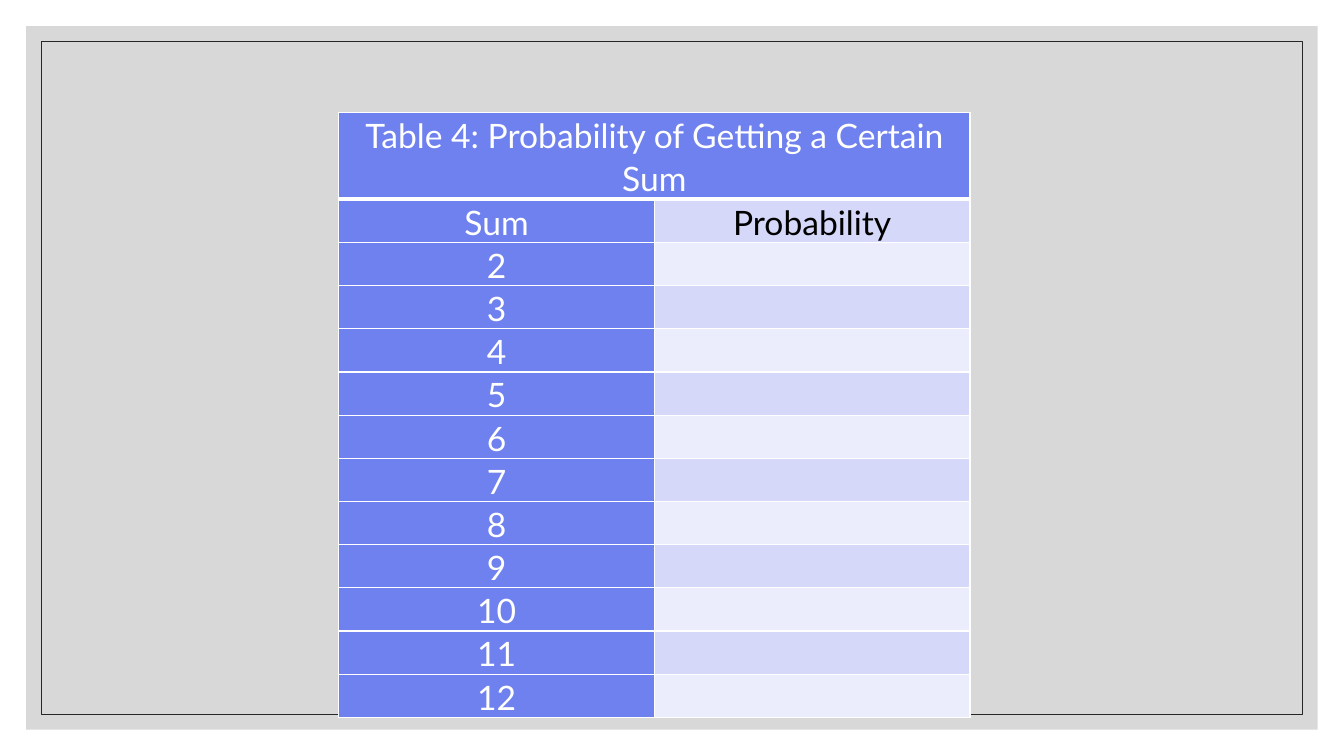
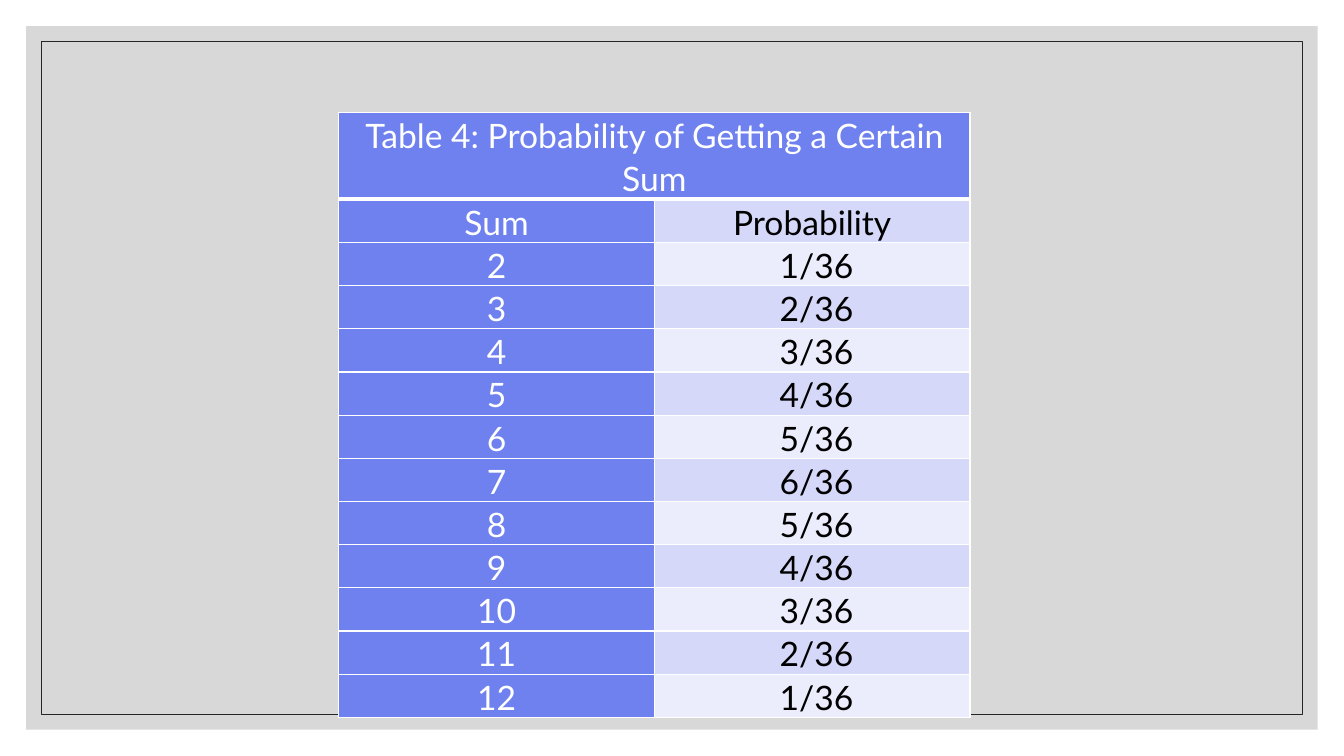
from lxml.etree import SubElement
from pptx import Presentation
from pptx.dml.color import RGBColor
from pptx.enum.shapes import MSO_SHAPE
from pptx.enum.text import PP_ALIGN
from pptx.oxml import parse_xml
from pptx.oxml.ns import nsdecls, qn
from pptx.util import Inches, Pt

# Content
TITLE = "Table 4: Probability of Getting a Certain Sum"
HEADINGS = ("Sum", "Probability")
WAYS = {2: 1, 3: 2, 4: 3, 5: 4, 6: 5, 7: 6, 8: 5, 9: 4, 10: 3, 11: 2, 12: 1}
OUTCOMES = 36
ANSWERS_SHOWN = (False, True)

# Shared look
FONT = "Lato"
WHITE = RGBColor(0xFF, 0xFF, 0xFF)
BLACK = RGBColor(0x00, 0x00, 0x00)
GREY = RGBColor(0xBF, 0xBF, 0xBF)
FRAME = RGBColor(0x26, 0x26, 0x26)
BLUE = RGBColor(0x6E, 0x81, 0xEE)
BANDS = (RGBColor(0xEB, 0xED, 0xFC), RGBColor(0xD5, 0xD8, 0xF8))

# Layout in inches
WIDTH, HEIGHT = 13.33, 7.5
PANEL_MARGIN, FRAME_MARGIN = 0.26, 0.41
TABLE_LEFT, TABLE_TOP, TABLE_WIDTH, TABLE_HEIGHT = 3.36, 1.12, 6.26, 5.99
TITLE_LINES = 2


def add_inset(page, margin):
    """Add a plain rectangle at an equal distance from every slide edge."""
    box = page.shapes.add_shape(
        MSO_SHAPE.RECTANGLE, Inches(margin), Inches(margin),
        Inches(WIDTH - 2 * margin), Inches(HEIGHT - 2 * margin))
    box.shadow.inherit = False
    return box


def add_background(page):
    panel = add_inset(page, PANEL_MARGIN)
    panel.fill.solid()
    panel.fill.fore_color.rgb = GREY
    panel.line.fill.background()
    color = panel.fill._xPr.find(qn("a:solidFill"))[0]
    SubElement(color, qn("a:alpha"), val="60000")

    frame = add_inset(page, FRAME_MARGIN)
    frame.fill.background()
    frame.line.color.rgb = FRAME
    frame.line.width = Pt(0.5)


def set_borders(cell, bottom=1):
    properties = cell._tc.get_or_add_tcPr()
    widths = {"lnL": 1, "lnR": 1, "lnT": 1, "lnB": bottom}
    for position, (side, width) in enumerate(widths.items()):
        properties.insert(position, parse_xml(
            f'<a:{side} {nsdecls("a")} w="{Pt(width)}"><a:solidFill>'
            f'<a:srgbClr val="{WHITE}"/></a:solidFill></a:{side}>'))


def write_cell(cell, text, fill, color=WHITE, size=24, bottom=1):
    cell.fill.solid()
    cell.fill.fore_color.rgb = fill
    set_borders(cell, bottom)
    cell.margin_left = cell.margin_right = Inches(0.07)
    cell.margin_top = cell.margin_bottom = 0
    para = cell.text_frame.paragraphs[0]
    para.alignment = PP_ALIGN.CENTER
    para.line_spacing = 1.07
    para.font.size = Pt(size)
    if text:
        span = para.add_run()
        span.text = text
        span.font.name = FONT
        span.font.size = Pt(size)
        span.font.color.rgb = color


def add_probability_table(page, answers_shown):
    rows = [HEADINGS] + [
        (str(total), f" {ways}/{OUTCOMES}" if answers_shown else "")
        for total, ways in WAYS.items()]
    table = page.shapes.add_table(
        len(rows) + 1, len(HEADINGS), Inches(TABLE_LEFT), Inches(TABLE_TOP),
        Inches(TABLE_WIDTH), Inches(TABLE_HEIGHT)).table

    # The title takes two lines, every other row one
    line_height = Inches(TABLE_HEIGHT / (len(rows) + TITLE_LINES))
    for row in table.rows:
        row.height = line_height
    table.rows[0].height = line_height * TITLE_LINES

    title = table.cell(0, 0)
    title.merge(table.cell(0, 1))
    write_cell(title, TITLE, BLUE, bottom=3)
    write_cell(table.cell(0, 1), "", BLUE, bottom=3)
    for index, (total, probability) in enumerate(rows, start=1):
        write_cell(table.cell(index, 0), total, BLUE)
        write_cell(table.cell(index, 1), probability, BANDS[index % 2], color=BLACK)


def main():
    deck = Presentation()
    deck.slide_width, deck.slide_height = Inches(WIDTH), Inches(HEIGHT)
    for answers_shown in ANSWERS_SHOWN:
        page = deck.slides.add_slide(deck.slide_layouts[6])
        add_background(page)
        add_probability_table(page, answers_shown)
    deck.save("out.pptx")


if __name__ == "__main__":
    main()
